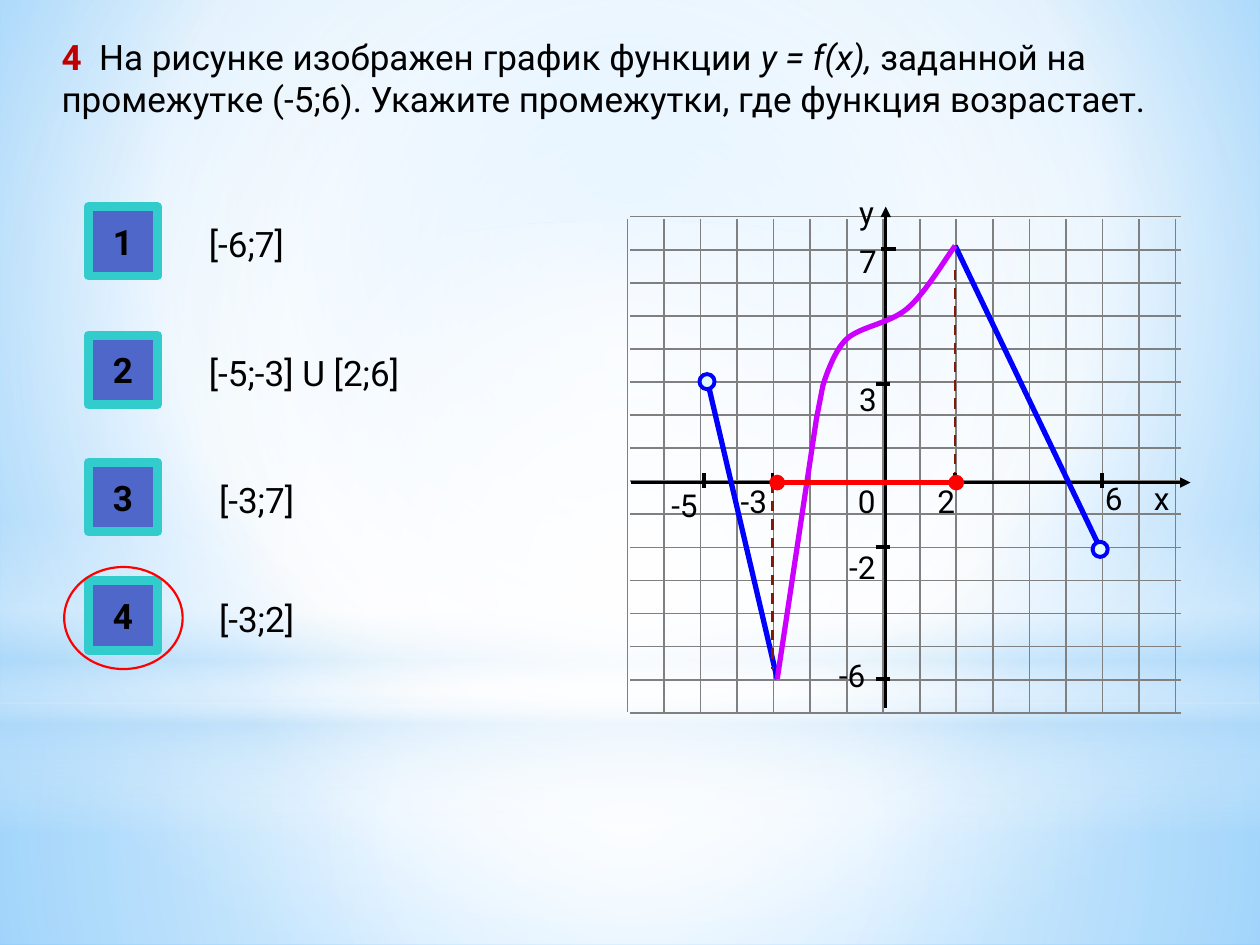
from lxml.etree import SubElement
from pptx import Presentation
from pptx.dml.color import RGBColor
from pptx.enum.dml import MSO_LINE
from pptx.enum.shapes import MSO_CONNECTOR, MSO_SHAPE
from pptx.enum.text import MSO_ANCHOR, PP_ALIGN
from pptx.oxml.ns import qn
from pptx.util import Inches, Pt

BLACK, BLUE, RED, BROWN = "000000", "0000FF", "FF0000", "821A08"
colour = RGBColor.from_string

deck = Presentation()
deck.slide_width, deck.slide_height = Inches(10), Inches(7.5)
slide = deck.slides.add_slide(deck.slide_layouts[6])
shapes = slide.shapes


def plane(x, y):
    """Slide position of a point given in units of the coordinate plane."""
    return Inches(7.03 + 0.29 * x), Inches(3.83 - 0.2625 * y)


def stroke(item, hue, width):
    """Outline an item and take away its shadow."""
    item.line.color.rgb = colour(hue)
    item.line.width = Pt(width)
    SubElement(item.element.spPr, qn("a:effectLst"))


# Background and its soft panels: box, outline, stops (place, colour, opacity), focus
centre = (50, 50, 50, 50)
backdrops = [
    (None, None, [(0, "9ED5FF", 100), (60, "FFFFFF", 100), (100, "5BB9FF", 100)],
     (20, 10, 20, 60)),
    ((0, 5.58, 10, 1.92), MSO_SHAPE.RECTANGLE,
     [(0, "FFFFFF", 91), (37, "FFFFFF", 76), (100, "B4DCFA", 79)], centre),
    ((0, 0, 10, 5.58), MSO_SHAPE.RECTANGLE,
     [(0, "FFFFFF", 89), (48, "FFFFFF", 62), (100, "B4DCFA", 79)], centre),
    ((0, 4.12, 10, 2.5), MSO_SHAPE.RECTANGLE,
     [(0, "FFFFFF", 0), (29, "FFFFFF", 30), (45, "B4DCFA", 40),
      (55, "FFFFFF", 26), (65, "B4DCFA", 60), (100, "FFFFFF", 0)], None),
    ((0, 1.75, 10, 5.58), MSO_SHAPE.OVAL,
     [(0, "FFFFFF", 100), (56, "FFFFFF", 0)], centre),
]
for box, outline, stops, focus in backdrops:
    if box:
        panel = shapes.add_shape(outline, *map(Inches, box))
        panel.line.fill.background()
        panel.shadow.inherit = False
        panel.fill.gradient()
        gradient = panel.element.spPr.find(qn("a:gradFill"))
    else:
        slide.background.fill.gradient()
        gradient = slide.element.find(".//" + qn("a:gradFill"))
    for child in list(gradient):
        gradient.remove(child)
    stop_list = SubElement(gradient, qn("a:gsLst"))
    for place, hue, opacity in stops:
        stop = SubElement(stop_list, qn("a:gs"), pos=str(place * 1000))
        tint = SubElement(stop, qn("a:srgbClr"), val=hue)
        if opacity < 100:
            SubElement(tint, qn("a:alpha"), val=str(opacity * 1000))
    if focus:
        spread = SubElement(gradient, qn("a:path"), path="circle")
        SubElement(spread, qn("a:fillToRect"),
                   **{side: str(share * 1000) for side, share in zip("ltrb", focus)})
    else:
        SubElement(gradient, qn("a:lin"), ang="5400000", scaled="0")

# Texts: left, top, width, height, runs of (wording, format)
plain = {"size": Pt(20), "bold": False, "italic": False}
texts = [(Inches(0.39), Inches(0.23), 9.34, 0.77, [
    ("4 ", plain | {"bold": True}),
    ("На рисунке изображен график функции ", plain),
    ("y = f(x), ", plain | {"italic": True}),
    ("заданной на промежутке (-5;6). Укажите промежутки, где функция возрастает.", plain),
])]

# Answer buttons
answers = [(1.64, 1.56, "[-6;7]"), (2.66, 1.56, "[-5;-3] U [2;6]"),
           (3.67, 1.64, "[-3;7]"), (4.61, 1.64, "[-3;2]")]
for number, (top, left, interval) in enumerate(answers, 1):
    button = shapes.add_shape(MSO_SHAPE.ACTION_BUTTON_CUSTOM, Inches(0.7), Inches(top),
                              Inches(0.55), Inches(0.55))
    button.fill.solid()
    button.fill.fore_color.rgb = colour("4E67C8")
    stroke(button, "33CCCC", 5)
    frame = button.text_frame
    frame.word_wrap = False
    frame.vertical_anchor = MSO_ANCHOR.MIDDLE
    digit = frame.paragraphs[0]
    digit.alignment = PP_ALIGN.CENTER
    digit.text = str(number)
    for key, value in {"size": Pt(20), "bold": True, "name": "Roboto"}.items():
        setattr(digit.font, key, value)
    digit.font.color.rgb = colour(BLACK)
    texts.append((Inches(left), Inches(top + 0.08), 2.02, 0.44, [(interval, plain)]))

# Labels of the plane, placed in its units
labels = [("у", -1.07, 8.95), ("х", 7, 0.3), ("0", -1.1, 0.19), ("2", 1.07, 0.19),
          ("6", 5.66, 0.3), ("-5", -6.21, 0.08), ("-3", -4.31, 0.19), ("7", -1.07, 7.47),
          ("3", -1.07, 3.28), ("-2", -1.34, -1.79), ("-6", -1.62, -5.07)]
for wording, x, y in labels:
    texts.append((*plane(x, y), 0.62, 0.4, [(wording, plain | {"size": Pt(18)})]))

# Lines: start, end, colour, width, dash, head, tail
grid = [((-7, 8.04 - row), (8.07, 8.04 - row), "808080", 1, None, None, None)
        for row in range(16)]
grid += [((column - 7.07, 7.96), (column - 7.07, -6.93), "808080", 1, None, None, None)
         for column in range(16)]
axes = [((-6.97, 0), (8.34, 0), BLACK, 1.5, None, None, "triangle"),
        ((0, -6.82), (0, 8.34), BLACK, 1.5, None, None, "triangle")]
branches = [((1.9, 7.16), (5.93, -2.13), BLUE, 3, None, None, None),
            ((-2.97, -5.94), (-4.86, 2.97), BLUE, 3, None, None, None)]
drops = [((1.9, 0), (1.9, 6.59), BROWN, 1.5, MSO_LINE.DASH, None, None),
         ((-3.1, 0), (-3.1, -5.64), BROWN, 1.5, MSO_LINE.DASH, None, None)]
ticks = [((x, -0.15), (x, 0.3), BLACK, 2.25, None, None, None)
         for x in (-4.97, -3.1, 1.9, 5.93)]
ticks += [((left, y), (left + 0.41, y), BLACK, 2.25, None, None, None)
          for left, y in ((-0.14, 7.05), (-0.28, 2.97), (-0.28, -1.94), (-0.28, -5.94))]
growth = [((-2.97, 0), (1.93, 0), RED, 3, None, "oval", "oval")]

for start, end, hue, width, dash, head, tail in grid + axes + branches + drops + ticks:
    line = shapes.add_connector(MSO_CONNECTOR.STRAIGHT, *plane(*start), *plane(*end))
    stroke(line, hue, width)
    if dash:
        line.line.dash_style = dash
    if tail:
        SubElement(line.line._get_or_add_ln(), qn("a:tailEnd"), type=tail)

# Rising part of the graph: Bezier pieces that share their end points
knots = [(-2.97, -5.94), (-2.79, -4.65), (-1.9, 1.9), (-1.9, 1.9),
         (-1.9, 1.9), (-1.72, 2.93), (-1.72, 2.93),
         (-1.72, 2.93), (-1.45, 3.96), (-1.07, 4.34),
         (-0.69, 4.72), (0.1, 4.8), (0.59, 5.26),
         (1.07, 5.71), (1.62, 6.74), (1.9, 7.16)]
curve_points = []
for first in range(0, len(knots) - 1, 3):
    for step in range(1, 13):
        t = step / 12
        weights = ((1 - t) ** 3, 3 * t * (1 - t) ** 2, 3 * t ** 2 * (1 - t), t ** 3)
        piece = knots[first:first + 4]
        curve_points.append(plane(*(sum(w * knot[axis] for w, knot in zip(weights, piece))
                                    for axis in (0, 1))))
builder = shapes.build_freeform(*plane(*knots[0]), scale=1.0)
builder.add_line_segments(curve_points, close=False)
rise = builder.convert_to_shape()
rise.fill.background()
stroke(rise, "CC00FF", 3)

for start, end, hue, width, dash, head, tail in growth:
    interval = shapes.add_connector(MSO_CONNECTOR.STRAIGHT, *plane(*start), *plane(*end))
    stroke(interval, hue, width)
    for tag, kind in (("a:headEnd", head), ("a:tailEnd", tail)):
        SubElement(interval.line._get_or_add_ln(), qn(tag), type=kind)

# Open end points and the ring round the right answer
rings = [(*plane(5.66, -1.79), 0.12, 0.12, "E0F9FC", BLUE, 2.25),
         (*plane(-5.1, 3.28), 0.12, 0.12, "E0F9FC", BLUE, 2.25),
         (Inches(0.51), Inches(4.5), 0.94, 0.81, None, RED, 1.25)]
for left, top, width, height, inside, hue, weight in rings:
    ring = shapes.add_shape(MSO_SHAPE.OVAL, left, top, Inches(width), Inches(height))
    if inside:
        ring.fill.solid()
        ring.fill.fore_color.rgb = colour(inside)
    else:
        ring.fill.background()
    stroke(ring, hue, weight)

for left, top, width, height, runs in texts:
    frame = shapes.add_textbox(left, top, Inches(width), Inches(height)).text_frame
    frame.word_wrap = True
    for wording, look in runs:
        run = frame.paragraphs[0].add_run()
        run.text = wording
        for key, value in (look | {"name": "Roboto"}).items():
            setattr(run.font, key, value)
        run.font.color.rgb = colour("C00000" if look["bold"] else BLACK)
        if look["bold"]:
            run.font._element.set("spc", "250")

deck.save("out.pptx")
